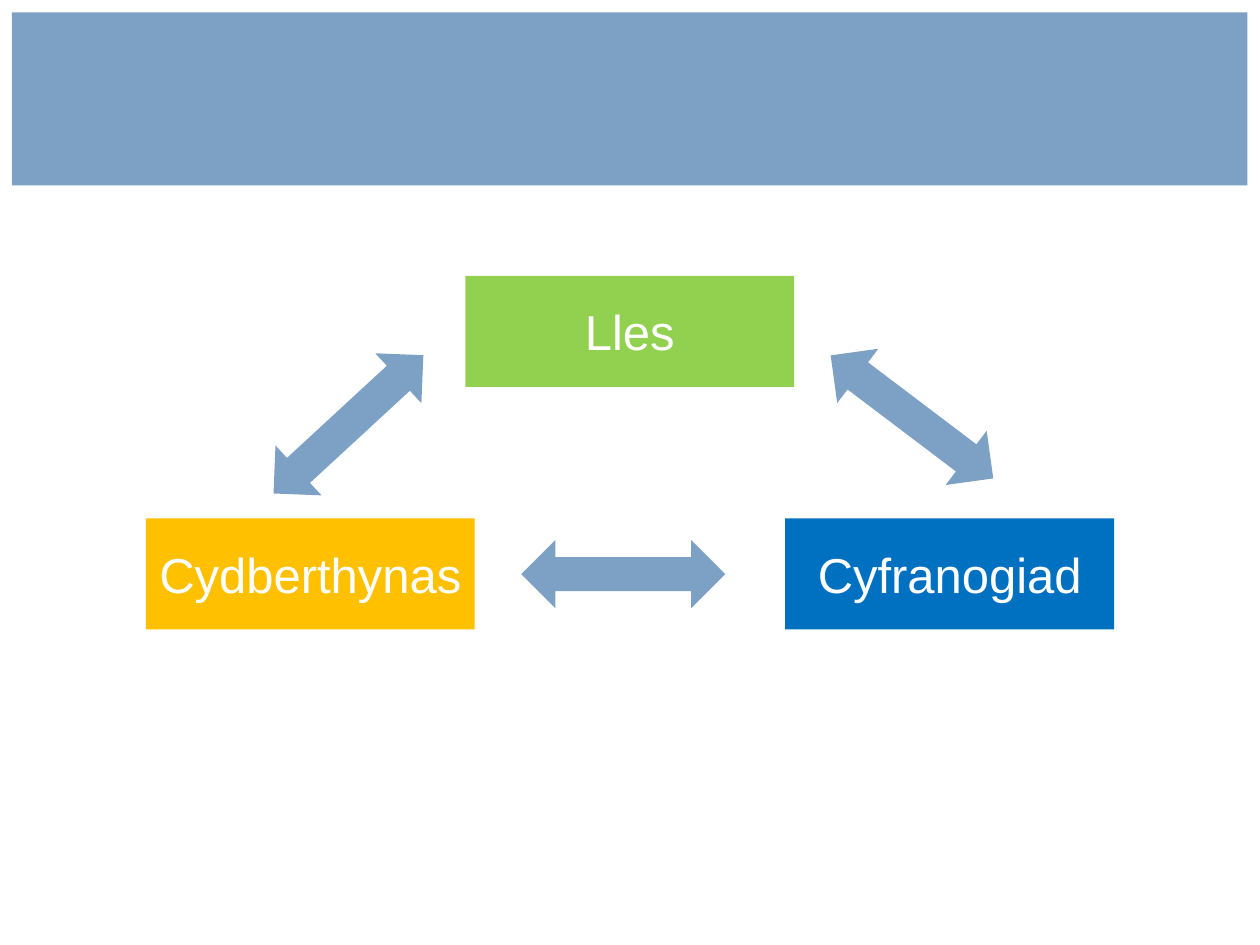
"""Build a slide with three linked concepts in a triangle."""
from pptx import Presentation
from pptx.dml.color import RGBColor
from pptx.enum.shapes import MSO_SHAPE
from pptx.enum.text import MSO_ANCHOR, PP_ALIGN
from pptx.util import Cm, Pt

STEEL = RGBColor(0x7D, 0xA1, 0xC4)
GREEN = RGBColor(0x92, 0xD0, 0x50)
AMBER = RGBColor(0xFF, 0xC0, 0x00)
BLUE = RGBColor(0x00, 0x70, 0xC0)
WHITE = RGBColor(0xFF, 0xFF, 0xFF)

deck = Presentation()
deck.slide_width = Cm(25.4)
deck.slide_height = Cm(19.05)
page = deck.slides.add_slide(deck.slide_layouts[6])


def add_filled(kind, left, top, width, height, color):
    shape = page.shapes.add_shape(kind, Cm(left), Cm(top), Cm(width), Cm(height))
    shape.shadow.inherit = False
    shape.fill.solid()
    shape.fill.fore_color.rgb = color
    shape.line.fill.background()
    return shape


add_filled(MSO_SHAPE.RECTANGLE, 0.24, 0.25, 24.91, 3.49, STEEL)

concepts = [
    ("Lles", 9.38, 5.56, GREEN),
    ("Cydberthynas", 2.94, 10.45, AMBER),
    ("Cyfranogiad", 15.83, 10.45, BLUE),
]
for label, left, top, color in concepts:
    box = add_filled(MSO_SHAPE.RECTANGLE, left, top, 6.63, 2.24, color)
    frame = box.text_frame
    frame.word_wrap = True
    frame.vertical_anchor = MSO_ANCHOR.MIDDLE
    frame.margin_left = frame.margin_right = Cm(0.2)
    para = frame.paragraphs[0]
    para.alignment = PP_ALIGN.CENTER
    span = para.add_run()
    span.text = label
    span.font.name = "Arial"
    span.font.size = Pt(28)
    span.font.color.rgb = WHITE

arrows = [(4.97, 7.87, 317.3), (16.33, 7.72, 37.1), (10.51, 10.89, 0)]
for left, top, angle in arrows:
    arrow = add_filled(MSO_SHAPE.LEFT_RIGHT_ARROW, left, top, 4.11, 1.37, STEEL)
    arrow.rotation = angle

deck.save("out.pptx")
